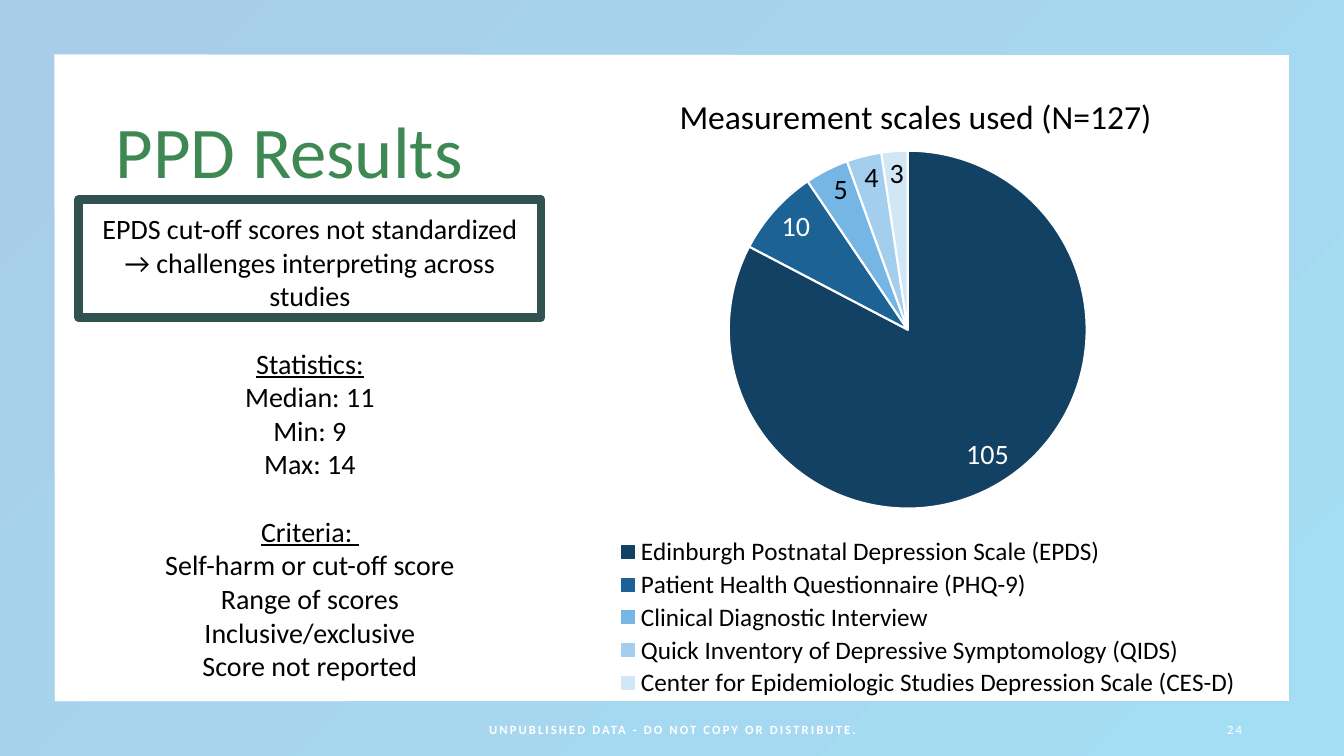
"""Builds the PPD results slide with its pie chart of measurement scales."""
from dataclasses import dataclass

from lxml import etree
from pptx import Presentation, util as u
from pptx.chart import data as chart_data
from pptx.dml import color
from pptx.enum import chart as ch, shapes, text
from pptx.oxml.ns import qn

TITLE = "PPD Results"
FINDINGS = [
    ["EPDS cut-off scores not standardized → challenges interpreting across studies"],
    ["Statistics:", "Median: 11", "Min: 9", "Max: 14"],
    ["Criteria: ", "Self-harm or cut-off score", "Range of scores",
     "Inclusive/exclusive", "Score not reported"],
]
FOOTER = "UNPUBLISHED DATA - DO NOT COPY OR DISTRIBUTE."
PAGE_NUMBER = "24"
CHART_TITLE = "Measurement scales used (N=127)"
SCALES = [
    ("Edinburgh Postnatal Depression Scale (EPDS)", 105, "134163", "FFFFFF"),
    ("Patient Health Questionnaire (PHQ-9)", 10, "1D6294", "FFFFFF"),
    ("Clinical Diagnostic Interview", 5, "75B6E5", "000000"),
    ("Quick Inventory of Depressive Symptomology (QIDS)", 4, "A3CEED", "000000"),
    ("Center for Epidemiologic Studies Depression Scale (CES-D)", 3, "D1E7F6", "000000"),
]
WIDTH, HEIGHT = 33.87, 19.05
FINDINGS_LEFT, FINDINGS_WIDTH = 1.98, 11.66
FOOTER_TOP, FOOTER_HEIGHT = 17.86, 1.02


@dataclass(frozen=True)
class Theme:
    """Font, colours and type sizes of the slide."""
    font: str = "Calibri"
    ink: str = "000000"
    white: str = "FFFFFF"
    green: str = "3E8853"
    callout: str = "305250"
    frame: tuple = ("A8CDE8", "A4DEF4")
    title: int = 52
    chart_title: int = 24
    body: int = 20
    legend: int = 18
    footer: int = 9


THEME = Theme()


def rgb(code):
    """Turn a hex code into a colour."""
    return color.RGBColor.from_string(code)


def box(left, top, width, height):
    """Give a position and size in centimetres."""
    return [u.Cm(length) for length in (left, top, width, height)]


def style(font, size, ink=THEME.ink, bold=False):
    """Apply the theme font with a size and colour."""
    font.name, font.size, font.bold = THEME.font, u.Pt(size), bold
    font.color.rgb = rgb(ink)


def add_text(slide, area, groups, size, ink=THEME.ink, align=text.PP_ALIGN.CENTER,
             anchor=text.MSO_ANCHOR.MIDDLE, bold=False, tracking=0, line=1.0):
    """Write groups of lines; the heading of each longer group is underlined."""
    frame = slide.shapes.add_textbox(*area).text_frame
    frame.word_wrap, frame.vertical_anchor = True, anchor
    lines = [(g, i, words) for g, group in enumerate(groups) for i, words in enumerate(group)]
    for number, (g, i, words) in enumerate(lines):
        paragraph = frame.add_paragraph() if number else frame.paragraphs[0]
        paragraph.alignment, paragraph.line_spacing = align, line
        if g and i == 0:
            paragraph.space_before = u.Pt(size * 1.2)
        run = paragraph.add_run()
        run.text = words
        style(run.font, size, ink, bold)
        if i == 0 and len(groups[g]) > 1:
            run.font.underline = True
        if tracking:
            run._r.get_or_add_rPr().set("spc", str(int(tracking * 100)))


def place(part, index, inner=False, **fractions):
    """Fix a chart part at fractions of the chart area."""
    for old in part.findall(qn("c:layout")):
        part.remove(old)
    layout = etree.Element(qn("c:layout"))
    manual = etree.SubElement(layout, qn("c:manualLayout"))
    settings = [("layoutTarget", "inner")] if inner else []
    settings += [("xMode", "edge"), ("yMode", "edge"), *fractions.items()]
    for tag, value in settings:
        etree.SubElement(manual, qn("c:" + tag)).set("val", str(value))
    part.insert(index, layout)


def add_frame(slide):
    """Draw the gradient frame around the slide."""
    frame = slide.shapes.add_shape(shapes.MSO_SHAPE.FRAME, *box(0, 0, WIDTH, HEIGHT))
    frame.adjustments[0] = 0.072
    frame.shadow.inherit = False
    frame.line.fill.background()
    frame.fill.gradient()
    frame.fill.gradient_angle = 315
    for stop, code in zip(frame.fill.gradient_stops, THEME.frame):
        stop.color.rgb = rgb(code)


def add_callout(slide):
    """Outline the main finding."""
    callout = slide.shapes.add_shape(
        shapes.MSO_SHAPE.RECTANGLE, *box(FINDINGS_LEFT, 5.03, FINDINGS_WIDTH, 2.97))
    callout.shadow.inherit = False
    callout.fill.background()
    callout.line.color.rgb = rgb(THEME.callout)
    callout.line.width = u.Pt(6)


def add_pie(slide):
    """Chart how often each scale was used."""
    names, counts, _, _ = zip(*SCALES)
    data = chart_data.CategoryChartData()
    data.categories = names
    data.add_series("Series 1", counts)
    pie = slide.shapes.add_chart(
        ch.XL_CHART_TYPE.PIE, *box(11.02, 1.57, 22.89, 16.08), data).chart
    style(pie.font, 10)
    pie.has_title = True
    heading = pie.chart_title.text_frame
    heading.text = CHART_TITLE
    style(heading.paragraphs[0].runs[0].font, THEME.chart_title)
    pie.has_legend = True
    pie.legend.position = ch.XL_LEGEND_POSITION.BOTTOM
    pie.legend.include_in_layout = False
    style(pie.legend.font, THEME.legend)
    pie.plots[0].vary_by_categories = True
    series = pie.plots[0].series[0]
    for number, (_, _, fill, ink) in enumerate(SCALES):
        point = series.points[number]
        point.format.fill.solid()
        point.format.fill.fore_color.rgb = rgb(fill)
        point.format.line.color.rgb = rgb(THEME.white)
        point.format.line.width = u.Pt(1.5)
        style(point.data_label.font, THEME.body, ink)
        point.data_label.position = ch.XL_LABEL_POSITION.BEST_FIT
    root = pie._chartSpace.chart
    place(root.find(qn("c:title")), 1, x=0.26, y=0.04)
    place(root.find(qn("c:plotArea")), 0, inner=True, x=0.321, y=0.11, w=0.394, h=0.618)
    place(root.find(qn("c:legend")), 1, x=0.19, y=0.74, w=0.7, h=0.26)


def main():
    """Assemble and save the slide."""
    deck = Presentation()
    deck.slide_width, deck.slide_height = u.Cm(WIDTH), u.Cm(HEIGHT)
    slide = deck.slides.add_slide(deck.slide_layouts[6])
    add_frame(slide)
    add_text(slide, box(2.67, 2.06, 29.21, 3.68), [[TITLE]], THEME.title, THEME.green,
             align=text.PP_ALIGN.LEFT, line=0.9)
    add_text(slide, box(11.23, FOOTER_TOP, 11.43, FOOTER_HEIGHT), [[FOOTER]],
             THEME.footer, THEME.white, bold=True, tracking=1.5)
    add_text(slide, box(23.93, FOOTER_TOP, 7.62, FOOTER_HEIGHT), [[PAGE_NUMBER]],
             THEME.footer, THEME.white, align=text.PP_ALIGN.RIGHT, tracking=1.5)
    add_pie(slide)
    add_text(slide, box(FINDINGS_LEFT, 5.21, FINDINGS_WIDTH, 12.22), FINDINGS,
             THEME.body, anchor=text.MSO_ANCHOR.TOP)
    add_callout(slide)
    deck.save("out.pptx")


if __name__ == "__main__":
    main()
